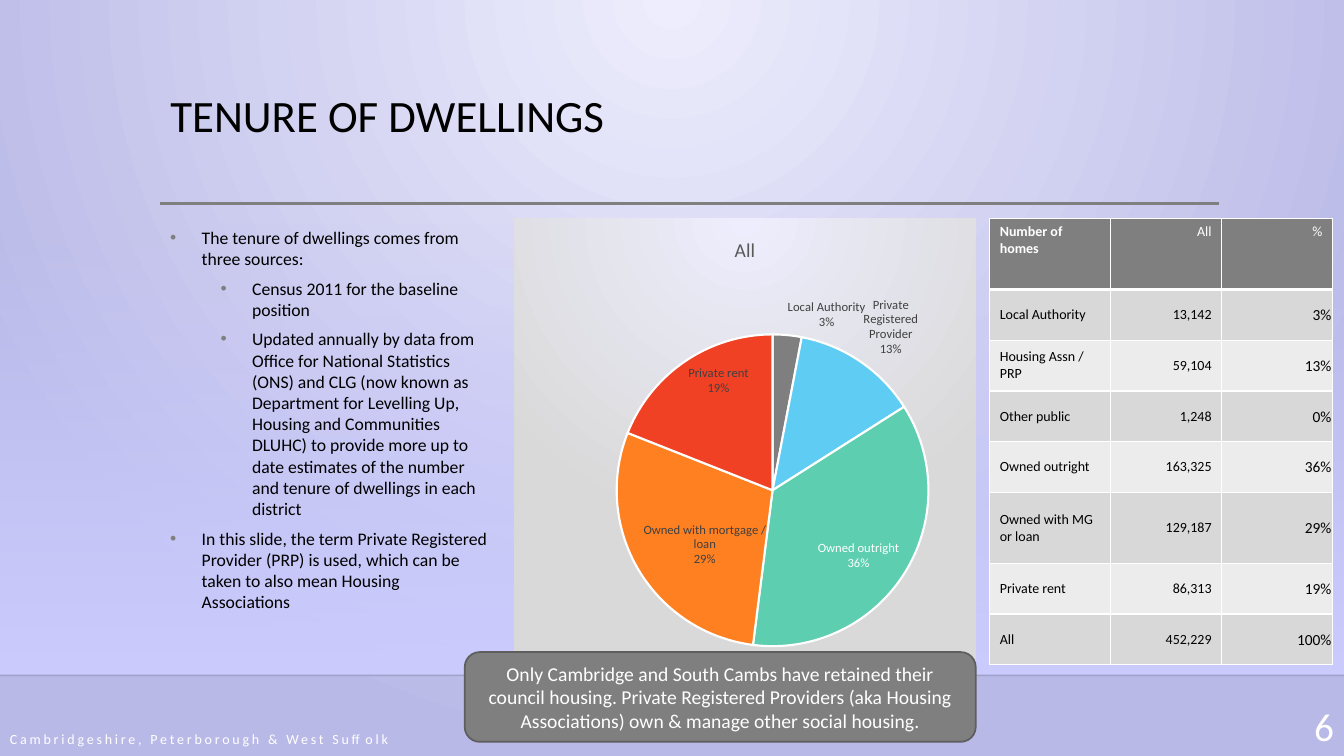
from lxml import etree
from pptx import Presentation
from pptx.chart.data import CategoryChartData
from pptx.dml.color import RGBColor
from pptx.enum.chart import XL_CHART_TYPE, XL_LABEL_POSITION
from pptx.enum.shapes import MSO_CONNECTOR, MSO_SHAPE
from pptx.enum.text import MSO_ANCHOR, MSO_AUTO_SIZE, PP_ALIGN
from pptx.oxml import parse_xml
from pptx.oxml.ns import nsdecls, qn
from pptx.util import Pt

PIE = XL_CHART_TYPE.PIE
INSIDE, OUTSIDE = XL_LABEL_POSITION.INSIDE_END, XL_LABEL_POSITION.OUTSIDE_END
STRAIGHT = MSO_CONNECTOR.STRAIGHT
RECTANGLE, ROUNDED = MSO_SHAPE.RECTANGLE, MSO_SHAPE.ROUNDED_RECTANGLE
TOP, MIDDLE = MSO_ANCHOR.TOP, MSO_ANCHOR.MIDDLE
LEFT, CENTER, RIGHT = PP_ALIGN.LEFT, PP_ALIGN.CENTER, PP_ALIGN.RIGHT
NO_FIT = MSO_AUTO_SIZE.NONE

FONT = "Calibri"
COLORS = {
    "black": "000000", "white": "FFFFFF", "grey": "7F7F7F", "edge": "5E5E5E",
    "glow": "EDEDFD", "lilac": "B9B9E7", "band": "CCCCFF", "chart_edge": "D9D9D9",
    "chart_title": "595959", "label": "404040", "odd": "D8D8D8", "even": "ECECEC",
    "sky": "5ECCF3", "lime": "A7EA52", "mint": "5DCEAF", "orange": "FF8021", "red": "F14124",
}
SLICES = [
    ("Local Authority", 3, "grey"),
    ("Private Registered Provider", 13, "sky"),
    ("Other public sector", 0, "lime"),
    ("Owned outright", 36, "mint"),
    ("Owned with mortgage / loan", 29, "orange"),
    ("Private rent", 19, "red"),
]
HOMES = [
    ("Number of homes", "All", "%"),
    ("Local Authority", "13,142", "3%"),
    ("Housing Assn / PRP", "59,104", "13%"),
    ("Other public", "1,248", "0%"),
    ("Owned outright", "163,325", "36%"),
    ("Owned with MG or loan", "129,187", "29%"),
    ("Private rent", "86,313", "19%"),
    ("All", "452,229", "100%"),
]
BULLETS = [
    (0, "The tenure of dwellings comes from three sources:"),
    (1, "Census 2011 for the baseline position"),
    (1, "Updated annually by data from Office for National Statistics (ONS) and CLG (now known as "
        "Department for Levelling Up, Housing and Communities DLUHC) to provide more up to date "
        "estimates of the number and tenure of dwellings in each district"),
    (0, "In this slide, the term Private Registered Provider (PRP) is used, which can be taken to "
        "also mean Housing Associations"),
]


def color(name):
    return RGBColor.from_string(COLORS[name])


def style(font, size, name):
    font.name, font.size = FONT, Pt(size)
    font.color.rgb = color(name)


def write(para, text, size, name, align=LEFT):
    para.alignment = align
    span = para.add_run()
    span.text = text
    style(span.font, size, name)
    return span


def gradient(first, last, direction, first_alpha=100):
    return parse_xml(
        f'<a:gradFill {nsdecls("a")} rotWithShape="1"><a:gsLst>'
        f'<a:gs pos="0"><a:srgbClr val="{COLORS[first]}"><a:alpha val="{first_alpha * 1000}"/></a:srgbClr></a:gs>'
        f'<a:gs pos="100000"><a:srgbClr val="{COLORS[last]}"/></a:gs></a:gsLst>{direction}</a:gradFill>')


def glow(last):
    return gradient("glow", last, '<a:path path="circle"><a:fillToRect l="43000" t="0" '
                                  'r="43000" b="100000"/></a:path>')


def replace_fill(parent, new_fill):
    old_fill = parent.find(qn("a:solidFill"))
    parent.replace(old_fill, new_fill)


def add_box(page, left, top, width, height, anchor=TOP):
    box = page.shapes.add_textbox(Pt(left), Pt(top), Pt(width), Pt(height))
    box.text_frame.word_wrap = True
    box.text_frame.vertical_anchor = anchor
    return box.text_frame


def add_panel(page, kind, left, top, width, height, fill):
    panel = page.shapes.add_shape(kind, Pt(left), Pt(top), Pt(width), Pt(height))
    panel.shadow.inherit = False
    panel.fill.solid()
    panel.fill.fore_color.rgb = color(fill)
    panel.line.fill.background()
    return panel


def add_rule(page, left, right, y, name, width, alpha=100):
    rule = page.shapes.add_connector(STRAIGHT, Pt(left), Pt(y), Pt(right), Pt(y))
    rule.line.width = Pt(width)
    rule.line.color.rgb = color(name)
    properties = rule._element.spPr
    tint = properties.find(".//" + qn("a:srgbClr"))
    etree.SubElement(tint, qn("a:alpha")).set("val", str(alpha * 1000))
    etree.SubElement(properties, qn("a:effectLst"))


def add_bullets(page):
    frame = add_box(page, 114.5, 158.4, 243.4, 318)
    for index, (level, text) in enumerate(BULLETS):
        para = frame.paragraphs[0] if index == 0 else frame.add_paragraph()
        para.level = level
        para.space_after = Pt(6)
        properties = para._p.get_or_add_pPr()
        properties.set("marL", str(Pt(22.5 + 36 * level)))
        properties.set("indent", str(Pt(-22.5)))
        tint = etree.SubElement(properties, qn("a:buClr"))
        etree.SubElement(tint, qn("a:srgbClr")).set("val", COLORS["grey"])
        etree.SubElement(properties, qn("a:buFont")).set("typeface", "Arial")
        etree.SubElement(properties, qn("a:buChar")).set("char", "•")
        write(para, text, 12.6, "black")


def manual_layout(target, **places):
    items = "".join(f'<c:{key} val="{value}"/>' for key, value in places.items())
    return parse_xml(f'<c:layout {nsdecls("c")}><c:manualLayout>{target}{items}</c:manualLayout></c:layout>')


def label_slices(series):
    labels = series.data_labels
    labels.position = INSIDE
    style(labels.font, 9, "label")
    for index in range(4):
        label = series.points[index].data_label
        style(label.font, 9, "white" if index == 3 else "label")
        label.position = INSIDE if index == 3 else OUTSIDE
    shown = {"showVal": "0", "showCatName": "1", "showPercent": "1"}
    for group in series._element.xpath(".//c:dLbl | .//c:dLbls"):
        for tag, value in shown.items():
            group.find(qn("c:" + tag)).set("val", value)
        separator = etree.Element(qn("c:separator"))
        separator.text = "\n"
        last_flag = group.find(qn("c:showBubbleSize"))
        if last_flag is None:
            last_flag = group.find(qn("c:showPercent"))
        last_flag.addnext(separator)
    sector = series._element.xpath(".//c:dLbl[c:idx/@val='2']/c:idx")[0]
    sector.addnext(manual_layout("", x=0.05, y=0.02))


def add_pie(page):
    data = CategoryChartData(number_format="#,##0")
    data.categories = [name for name, _, _ in SLICES]
    data.add_series("All", [value for _, value, _ in SLICES])
    chart = page.shapes.add_chart(PIE, Pt(367.2), Pt(156.2), Pt(329.8), Pt(318.2), data).chart
    style(chart.font, 10, "black")
    chart.has_legend = False
    chart.has_title = True
    title = chart.chart_title.text_frame.paragraphs[0]
    write(title, "All", 14, "chart_title", CENTER).font.bold = False
    plot = chart.plots[0]
    plot.vary_by_categories = True
    series = plot.series[0]
    for index, (_, _, name) in enumerate(SLICES):
        look = series.points[index].format
        look.fill.solid()
        look.fill.fore_color.rgb = color(name)
        look.line.color.rgb = color("white")
        look.line.width = Pt(1.5)
    label_slices(series)
    area = chart._chartSpace.find(".//" + qn("c:plotArea"))
    for layout in area.findall(qn("c:layout")):
        area.remove(layout)
    area.insert(0, manual_layout('<c:layoutTarget val="inner"/><c:xMode val="edge"/><c:yMode val="edge"/>',
                                 x=0.22, y=0.26, w=0.68, h=0.7))
    backdrop = parse_xml(f'<c:spPr {nsdecls("c", "a")}><a:ln><a:noFill/></a:ln></c:spPr>')
    backdrop.insert(0, glow("chart_edge"))
    chart._chartSpace.find(qn("c:chart")).addnext(backdrop)


def format_cell(cell, text, row, column):
    header = row == 0
    properties = cell._tc.get_or_add_tcPr()
    for side in "LRTB":
        width = 3 if header and side == "B" or row == 1 and side == "T" else 1
        properties.append(parse_xml(
            f'<a:ln{side} {nsdecls("a")} w="{Pt(width)}"><a:solidFill>'
            f'<a:srgbClr val="{COLORS["white"]}"/></a:solidFill></a:ln{side}>'))
    cell.fill.solid()
    cell.fill.fore_color.rgb = color("grey" if header else "odd" if row % 2 else "even")
    cell.vertical_anchor = TOP if header else MIDDLE
    percent = column == 2 and not header
    if percent:
        cell.margin_left = cell.margin_right = cell.margin_top = Pt(0.7)
        cell.margin_bottom = 0
    span = write(cell.text_frame.paragraphs[0], text, 11 if percent else 10,
                 "white" if header else "black", RIGHT if column else LEFT)
    span.font.bold = header and column == 0


def add_homes_table(page):
    table = page.shapes.add_table(len(HOMES), 3, Pt(707), Pt(156.2), Pt(244.8), Pt(318.6)).table
    for column, width in zip(table.columns, (86.4, 79.2, 79.2)):
        column.width = Pt(width)
    for row, texts in enumerate(HOMES):
        table.rows[row].height = Pt(50.7 if row in (0, 5) else 36.2)
        for column, text in enumerate(texts):
            format_cell(table.cell(row, column), text, row, column)


def add_title(page, text):
    title = page.shapes.title
    title.left, title.top, title.width, title.height = Pt(114.5), Pt(63.4), Pt(756), Pt(82.8)
    frame = title.text_frame
    frame.auto_size = NO_FIT
    frame.vertical_anchor = TOP
    frame.paragraphs[0].line_spacing = 0.9
    write(frame.paragraphs[0], text, 32, "black")


def add_callout(page, text):
    panel = add_panel(page, ROUNDED, 332, 465.8, 365, 64.1, "grey")
    panel.line.color.rgb = color("edge")
    panel.line.width = Pt(1.25)
    panel.text_frame.word_wrap = True
    panel.text_frame.vertical_anchor = MIDDLE
    write(panel.text_frame.paragraphs[0], text, 14, "white", CENTER)


def main():
    deck = Presentation()
    deck.slide_width, deck.slide_height = Pt(960), Pt(540)
    page = deck.slides.add_slide(deck.slide_layouts[5])
    page.background.fill.solid()
    replace_fill(page._element.find(".//" + qn("p:bgPr")), glow("lilac"))
    band = add_panel(page, RECTANGLE, 0, 159, 960, 323.4, "band")
    replace_fill(band._element.spPr, gradient("band", "band", '<a:lin ang="5400000" scaled="0"/>', 0))
    add_rule(page, 0, 960, 482.4, "black", 1, 20)
    add_rule(page, 114.5, 871, 145.4, "grey", 2.5)
    add_pie(page)
    add_homes_table(page)
    add_title(page, "TENURE OF DWELLINGS")
    add_bullets(page)
    add_callout(page, "Only Cambridge and South Cambs have retained their council housing. Private Registered "
                      "Providers (aka Housing Associations) own & manage other social housing.")
    number = add_box(page, 896.4, 498.2, 63.6, 39.6)
    write(number.paragraphs[0], "6", 28, "white", RIGHT)
    footer = add_box(page, 0, 515.5, 467, 24.5, MIDDLE)
    span = write(footer.paragraphs[0], "Cambridgeshire, Peterborough & West Suffolk", 10, "white")
    span.font._element.set("spc", "200")
    deck.save("out.pptx")


if __name__ == "__main__":
    main()
